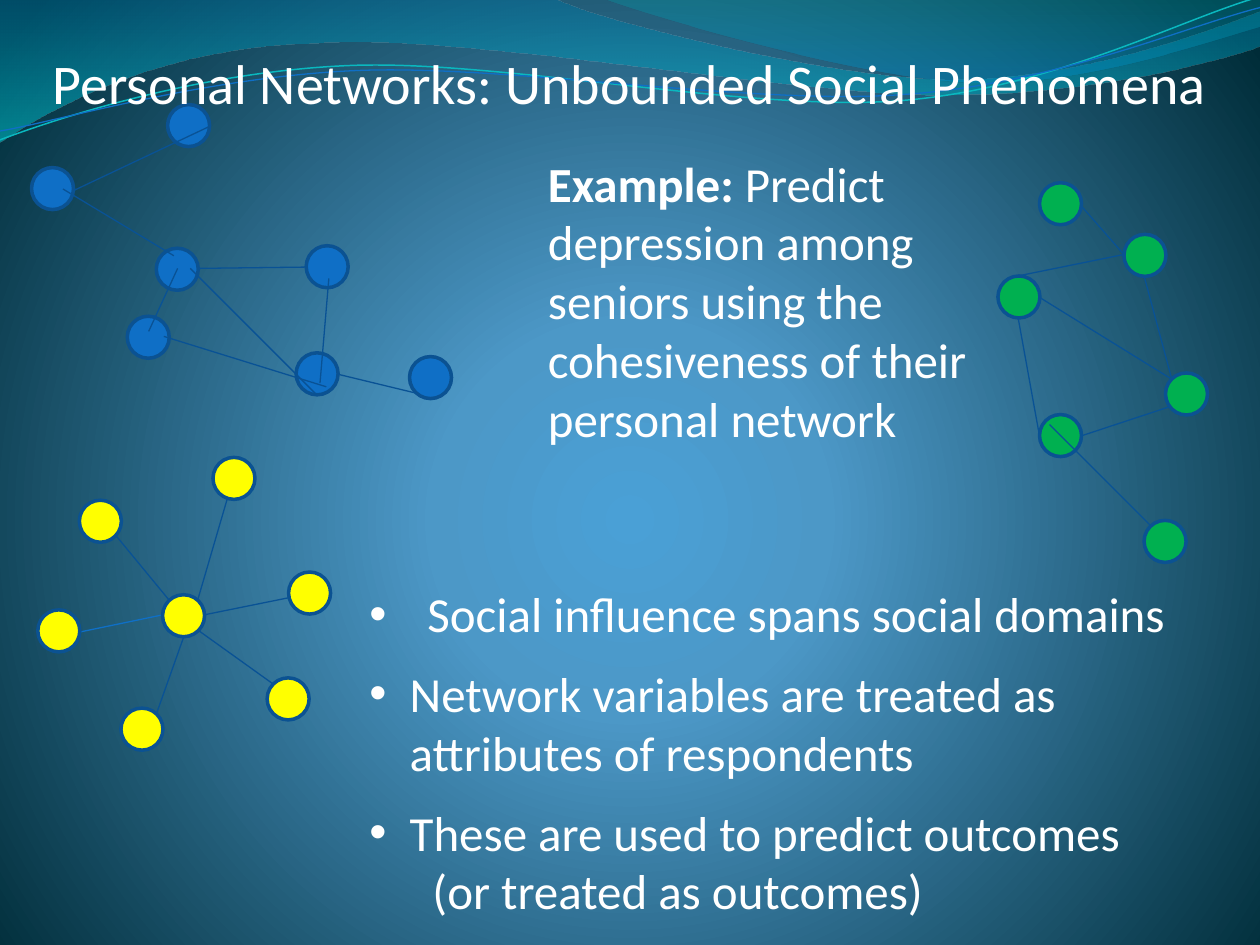
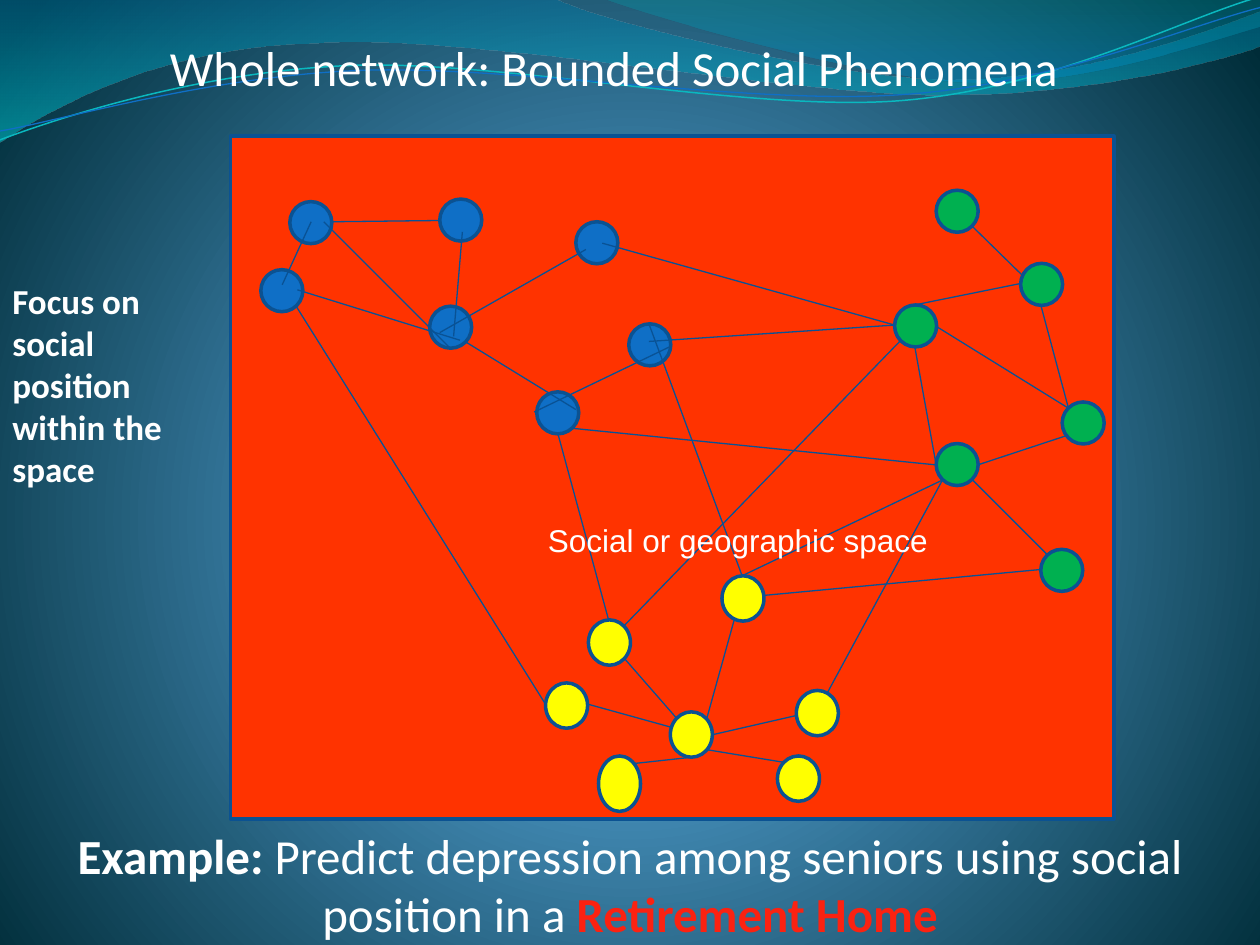
from math import cos, radians, sin

from lxml import etree
from pptx import Presentation
from pptx import util as u
from pptx.dml.color import RGBColor
from pptx.enum import shapes, text
from pptx.oxml import parse_xml
from pptx.oxml.ns import nsdecls, qn

# The slide is a grid of 10 columns by 7.5 rows; every length counts cells.
COLUMNS, ROWS = 10, 7.5
CELL = u.Inches(1)
NODE = 1 / 3
WAVE_TILT = 2.7
WAVE_CENTER = (4.99, 0.58)

COLORS = {
    "text": "FFFFFF", "accent": "FB2211", "space": "FF3300",
    "blue": "0F6FC6", "green": "00B050", "yellow": "FFFF00",
    "outline": "0B5292", "edge": "095295", "aqua": "0AB8BF",
}

# Gradient stops: position %, colour, opacity %
BACKDROP = [(0, "4AA0D6", 100), (25, "4C98C7", 100), (100, "002C38", 100)]
RADIAL = '<a:path path="circle"><a:fillToRect l="10000" t="110000" r="10000" b="100000"/></a:path>'
DOWNWARD = '<a:lin ang="5400000" scaled="0"/>'

# Outlines: a start point, then line ends (1 point) or cubic curves (3 points)
BANDS = [
    ([[(0, 0)], [(4.4, -0.01)], [(4.76, 0.17), (6.64, 0.63), (7.58, 0.63)],
      [(8.53, 0.63), (9.58, 0.26), (10, 0.09)], [(10.01, 0.36)],
      [(9.83, 0.44), (8.7, 0.76), (7.46, 0.75)], [(6.22, 0.75), (3.82, 0.28), (2.57, 0.34)],
      [(1.29, 0.36), (0.46, 0.83), (-0.01, 1.13)]],
     [(0, "0074A1", 45), (100, "00C6CF", 55)]),
    ([[(4.79, -0.01)], [(5.09, 0.11), (6.82, 0.62), (7.69, 0.65)],
      [(8.56, 0.69), (9.61, 0.32), (10, 0.21)], [(10, 0)]],
     [(0, "00A1A9", 30), (80, "008BBF", 45)]),
]
WAVES = [
    ([[(0, 1.11)], [(0.48, 0.93), (1.58, 0.57), (2.77, 0.52)],
      [(3.95, 0.47), (5.93, 0.89), (7.13, 0.8)], [(8.33, 0.71), (9.38, 0.15), (9.98, -0.02)]],
     "aqua", 0.85),
    ([[(0, 1.04)], [(0.47, 0.96), (1.64, 0.61), (2.83, 0.56)],
      [(4.03, 0.51), (5.97, 0.84), (7.17, 0.75)], [(8.36, 0.67), (9.41, 0.21), (10, 0.06)]],
     "blue", 0.75),
]

# Networks: nodes "under" the edges, the edges, nodes "over" the edges.
# The two cores appear on both slides, moved by a shift.
BLUE_CORE = {
    "color": "blue",
    "under": [(1.24, 1.97), (2.43, 1.95), (1.01, 2.51), (2.35, 2.8)],
    "edges": [(1.51, 2.13, 2.51, 3.13), (2.61, 2.21, 2.54, 3.04), (1.3, 2.67, 2.59, 3.07),
              (1.58, 2.13, 2.43, 2.12), (1.41, 2.13, 1.18, 2.63)],
}
GREEN_CORE = {
    "color": "green",
    "under": [(7.92, 2.19)],
    "edges": [(8.25, 2.36, 9.3, 3.01), (8.58, 3.46, 9.58, 3.13), (8.08, 2.19, 8.92, 2.02),
              (9.3, 3.01, 9.08, 2.19), (8.08, 2.52, 8.25, 3.46), (8.33, 3.37, 9.33, 4.37)],
    "over": [(8.92, 1.86), (9.25, 2.96), (9.08, 4.13)],
}
PERSONAL = [
    BLUE_CORE,
    GREEN_CORE,
    {"color": "blue",
     "under": [(1.33, 0.83), (0.25, 1.33), (3.25, 2.83)],
     "edges": [(1.67, 1, 0.59, 1.51), (3.3, 3.12, 2.68, 2.97), (1.38, 2.03, 0.5, 1.5)]},
    {"color": "green",
     "under": [(8.25, 3.29)],
     "edges": [(8.42, 1.45, 8.92, 2.02)],
     "over": [(8.25, 1.45)]},
    {"color": "yellow",
     "edges": [(1.57, 5, 2.17, 5.43), (1.62, 4.88, 2.46, 4.71), (1.34, 4.76, 0.92, 4.25),
               (1.24, 5.67, 1.46, 5.05), (1.57, 4.76, 1.85, 3.8)],
     "over": [(0.63, 3.97), (2.12, 5.38), (0.96, 5.62), (1.29, 4.72),
              (1.69, 3.63), (2.29, 4.54), (0.3, 4.84)]},
    {"color": "yellow", "edge": "blue", "edges": [(0.47, 5.05, 1.29, 4.88)]},
]
WHOLE = [
    {**BLUE_CORE, "shift": (1.06, -0.37)},
    {**GREEN_CORE, "shift": (-0.82, 0.23)},
    {"color": "blue",
     "under": [(4.99, 2.57), (4.26, 3.11), (4.57, 1.76)],
     "edges": [(5.32, 2.75, 4.24, 3.27), (4.65, 1.98, 3.49, 2.64), (4.57, 3.25, 3.69, 2.71)]},
    {"color": "green",
     "edges": [(7.71, 1.79, 8.18, 2.25)],
     "over": [(7.43, 1.51), (7.43, 3.52)]},
    {"color": "yellow", "height": 0.36,
     "under": [(4.67, 4.92), (6.17, 6)],
     "edges": [(5.61, 5.95, 6.22, 6.05), (5.66, 5.83, 6.49, 5.64), (5.61, 5.7, 5.88, 4.73),
               (5.37, 5.7, 4.95, 5.22), (4.67, 5.59, 5.5, 5.82)],
     "over": [(4.33, 5.42), (5.32, 5.65), (6.32, 5.48), (5.73, 4.57)]},
    {"color": "yellow", "height": 0.44,
     "under": [(4.75, 6)],
     "edges": [(5.03, 6.06, 5.49, 6.01)]},
    {"color": "blue",  # ties between the groups
     "edges": [(5.89, 4.57, 7.48, 3.81), (5.15, 2.57, 5.89, 4.57), (4.33, 5.59, 2.35, 2.43),
               (4.43, 3.45, 4.83, 4.92), (4.95, 4.97, 7.15, 2.7), (5.91, 4.74, 8.26, 4.52),
               (4.55, 3.4, 7.43, 3.69), (7.1, 2.58, 4.78, 1.93), (6.49, 5.64, 7.48, 3.81),
               (5.15, 2.71, 7.1, 2.58)]},
]

# A paragraph is a list of (words, style) spans plus optional layout
SLIDES = [
    {"network": PERSONAL, "texts": [
        {"at": (0.25, 1 / 3, 9.5, 0.63), "size": 32, "center": True,
         "paras": [{"spans": [("Personal Networks: Unbounded Social Phenomena", "")]}]},
        {"at": (2 + 5 / 6, 4 + 7 / 12, 7 + 1 / 6, 3.1), "size": 28, "paras": [
            {"spans": [("Social influence spans social domains", "")],
             "bullet": True, "margin": 0.46, "hang": 0.46, "after": 12},
            {"spans": [("Network variables are treated as attributes of respondents", "")],
             "bullet": True, "margin": 0.32, "hang": 0.32, "after": 12},
            {"spans": [("These are used to predict outcomes", "")],
             "bullet": True, "margin": 0.32, "hang": 0.32},
            {"spans": [("(or treated as outcomes)", "")],
             "level": 1, "margin": 0.82, "hang": 0.32}]},
        {"at": (4.25, 1 + 1 / 6, 3.58, 2.46), "size": 28, "paras": [{"spans": [
            ("Example: ", "bold"),
            ("Predict depression among seniors using the cohesiveness of their "
             "personal network", "")]}]},
    ]},
    {"space": (1.83, 1.08, 7.01, 5.42), "network": WHOLE, "texts": [
        {"at": (4.25, 4 + 1 / 12, 3.33, 0.4), "size": 18, "font": "Arial",
         "paras": [{"spans": [("Social or geographic space", "")]}]},
        {"at": (1.25, 0.25, 8.25, 0.57), "size": 28,
         "paras": [{"spans": [("Whole network: Bounded Social Phenomena", "")]}]},
        {"at": (0, 6.5, 10, 1.04), "size": 28, "center": True, "paras": [{"spans": [
            ("Example: ", "bold"),
            ("Predict depression among seniors using social position in a ", ""),
            ("Retirement Home", "bold accent")]}]},
        {"at": (0, 2 + 1 / 6, 1.83, 1.78), "size": 20,
         "paras": [{"spans": [("Focus on social position within the space", "bold")]}]},
    ]},
]


def cells(*values):
    return [round(value * CELL) for value in values]


def rgb(name):
    return RGBColor.from_string(COLORS[name])


def set_gradient(fill, element, stops, direction):
    fill.gradient()
    old = element.find(".//" + qn("a:gradFill"))
    marks = ""
    for place, color, opacity in stops:
        alpha = f'<a:alpha val="{opacity * 1000}"/>' if opacity < 100 else ""
        marks += f'<a:gs pos="{place * 1000}"><a:srgbClr val="{color}">{alpha}</a:srgbClr></a:gs>'
    new = parse_xml(f'<a:gradFill {nsdecls("a")} rotWithShape="1">'
                    f"<a:gsLst>{marks}</a:gsLst>{direction}</a:gradFill>")
    old.getparent().replace(old, new)


def add_outline(page, outline, close):
    """Build straight segments, then join each run of three into one curve."""
    points = [tuple(cells(*point)) for part in outline for point in part]
    builder = page.shapes.build_freeform(*points[0], scale=1.0)
    builder.add_line_segments(points[1:], close=close)
    shape = builder.convert_to_shape()
    shape.shadow.inherit = False
    segments = iter(shape.element.findall(".//" + qn("a:lnTo")))
    for part in outline[1:]:
        first, *others = [next(segments) for _ in part]
        if others:
            curve = etree.Element(qn("a:cubicBezTo"))
            first.addprevious(curve)
            for segment in (first, *others):
                curve.append(segment[0])
                segment.getparent().remove(segment)
    return shape


def level_out(point):
    """Turn a point of a tilted wave back to where it lies before the tilt."""
    angle = radians(WAVE_TILT)
    dx, dy = point[0] - WAVE_CENTER[0], point[1] - WAVE_CENTER[1]
    return (WAVE_CENTER[0] + dx * cos(angle) - dy * sin(angle),
            WAVE_CENTER[1] + dx * sin(angle) + dy * cos(angle))


def add_backdrop(page):
    set_gradient(page.background.fill, page.element, BACKDROP, RADIAL)
    for outline, stops in BANDS:
        band = add_outline(page, outline, close=True)
        set_gradient(band.fill, band.element, stops, DOWNWARD)
        band.line.fill.background()
    for outline, color, width in WAVES:
        level = [[level_out(point) for point in part] for part in outline]
        wave = add_outline(page, level, close=False)
        wave.rotation = 360 - WAVE_TILT
        wave.fill.background()
        wave.line.color.rgb = rgb(color)
        wave.line.width = u.Pt(width)


def add_outlined(page, kind, at, color):
    shape = page.shapes.add_shape(kind, *cells(*at))
    shape.shadow.inherit = False
    shape.fill.solid()
    shape.fill.fore_color.rgb = rgb(color)
    shape.line.color.rgb = rgb("outline")
    shape.line.width = u.Pt(2)


def add_edge(page, ends, color):
    edge = page.shapes.add_connector(shapes.MSO_CONNECTOR.STRAIGHT, *cells(*ends))
    edge.line.color.rgb = rgb(color)
    edge.line.width = u.Pt(0.75)
    etree.SubElement(edge.element.spPr, qn("a:effectLst"))


def add_network(page, groups):
    for layer in ("under", "edges", "over"):
        for group in groups:
            dx, dy = group.get("shift", (0, 0))
            for item in group.get(layer, []):
                if layer == "edges":
                    x1, y1, x2, y2 = item
                    add_edge(page, (x1 + dx, y1 + dy, x2 + dx, y2 + dy),
                             group.get("edge", "edge"))
                else:
                    at = (item[0] + dx, item[1] + dy, NODE, group.get("height", NODE))
                    add_outlined(page, shapes.MSO_SHAPE.OVAL, at, group["color"])


def format_para(para, layout):
    para.level = layout.get("level", 0)
    para.space_after = u.Pt(layout.get("after", 0))
    margin, hang = cells(layout.get("margin", 0), layout.get("hang", 0))
    properties = para._p.get_or_add_pPr()
    properties.set("marL", str(margin))
    properties.set("indent", str(-hang))
    if layout.get("bullet"):
        etree.SubElement(properties, qn("a:buFont")).set("typeface", "Arial")
        etree.SubElement(properties, qn("a:buChar")).set("char", "•")


def add_text(page, block):
    box = page.shapes.add_textbox(*cells(*block["at"]))
    frame = box.text_frame
    frame.word_wrap = True
    frame.auto_size = text.MSO_AUTO_SIZE.SHAPE_TO_FIT_TEXT
    for number, layout in enumerate(block["paras"]):
        para = frame.add_paragraph() if number else frame.paragraphs[0]
        if block.get("center"):
            para.alignment = text.PP_ALIGN.CENTER
        format_para(para, layout)
        for words, style in layout["spans"]:
            span = para.add_run()
            span.text = words
            span.font.name = block.get("font", "Calibri")
            span.font.size = u.Pt(block["size"])
            span.font.bold = "bold" in style
            span.font.color.rgb = rgb("accent" if "accent" in style else "text")


def main():
    deck = Presentation()
    deck.slide_width, deck.slide_height = cells(COLUMNS, ROWS)
    for content in SLIDES:
        page = deck.slides.add_slide(deck.slide_layouts[6])
        add_backdrop(page)
        if "space" in content:
            add_outlined(page, shapes.MSO_SHAPE.RECTANGLE, content["space"], "space")
        add_network(page, content["network"])
        for block in content["texts"]:
            add_text(page, block)
    deck.save("out.pptx")


if __name__ == "__main__":
    main()
